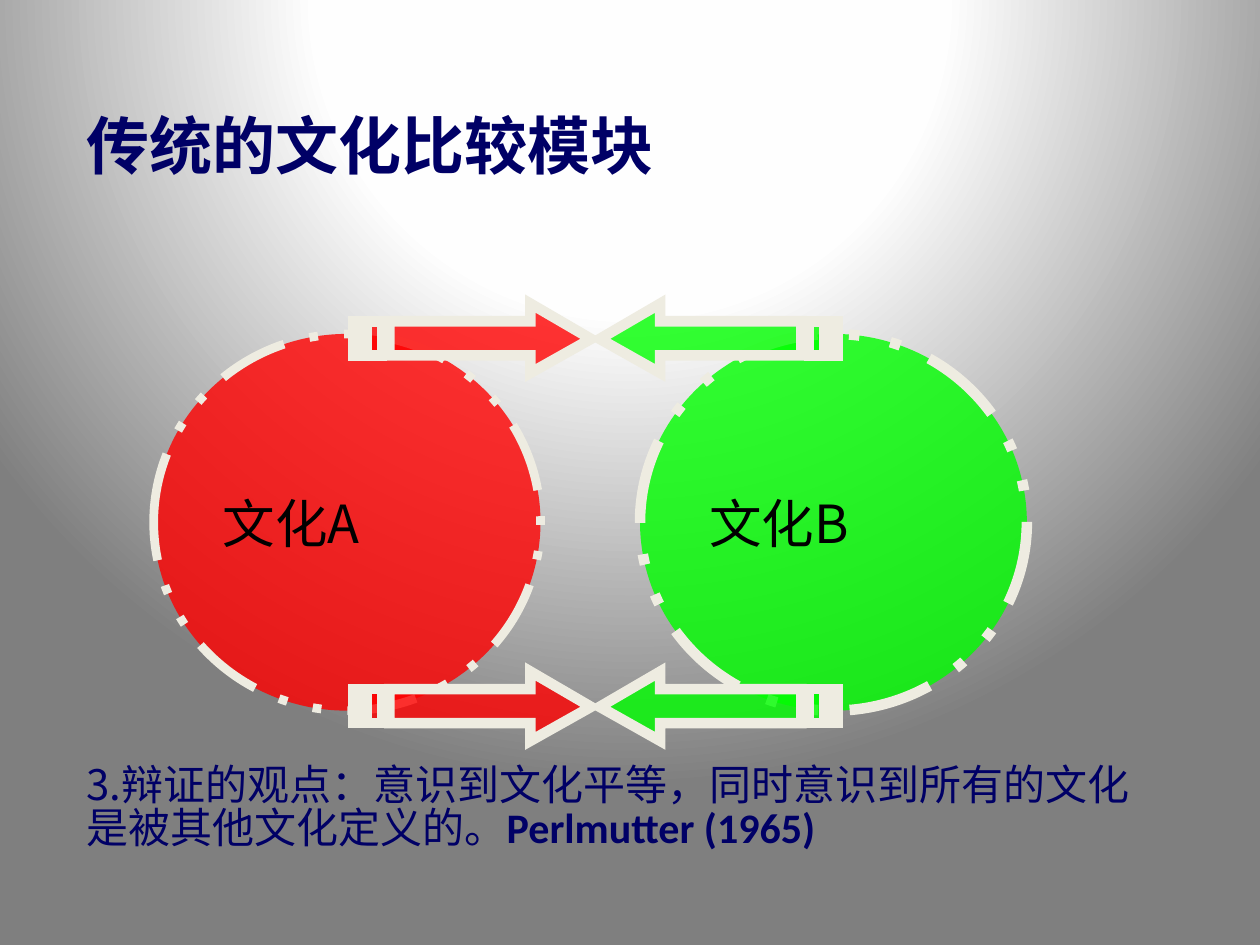
import pptx
import pptx.dml.color
import pptx.enum.dml
import pptx.enum.shapes
import pptx.enum.text
import pptx.oxml
import pptx.oxml.ns
import pptx.util

Inches = pptx.util.Inches
THEME = {
    "cjk": "Noto Sans CJK SC", "latin": "Calibri",
    "navy": "000066", "black": "000000", "cream": "EEECE1",
    "red": "FF0000", "green": "00FF00", "alpha": 80,
    "title": 36, "label": 30, "body": 24,
}


def add_run(p, text, size, color, font=THEME["cjk"], bold=False):
    r = p.add_run()
    r.text = text
    r.font.size = pptx.util.Pt(size)
    r.font.bold = bold
    r.font.name = font
    r.font.color.rgb = pptx.dml.color.RGBColor.from_string(color)
    ea = pptx.oxml.parse_xml(
        f'<a:ea {pptx.oxml.ns.nsdecls("a")} typeface="{font}"/>')
    r.font._element.find(pptx.oxml.ns.qn("a:latin")).addnext(ea)


def style_shape(sp, color, width):
    sp.shadow.inherit = False
    sp.fill.solid()
    sp.fill.fore_color.rgb = pptx.dml.color.RGBColor.from_string(color)
    clr = sp._element.spPr.find(".//" + pptx.oxml.ns.qn("a:srgbClr"))
    clr.append(pptx.oxml.parse_xml(
        f'<a:alpha {pptx.oxml.ns.nsdecls("a")} val="{THEME["alpha"] * 1000}"/>'))
    sp.line.color.rgb = pptx.dml.color.RGBColor.from_string(THEME["cream"])
    sp.line.width = pptx.util.Pt(width)
    sp.line._get_or_add_ln().append(pptx.oxml.parse_xml(
        f'<a:miter {pptx.oxml.ns.nsdecls("a")} lim="800000"/>'))


prs = pptx.Presentation()
prs.slide_width, prs.slide_height = Inches(10), Inches(7.5)
s = prs.slides.add_slide(prs.slide_layouts[5])

# Background: circular gradient centred above the slide
s.background.fill.solid()
solid = s._element.find(".//" + pptx.oxml.ns.qn("p:bgPr"))[0]
stops = "".join(
    f'<a:gs pos="{pos * 1000}"><a:srgbClr val="{color}"/></a:gs>'
    for pos, color in [(0, "FFFFFF"), (40, "FEFEFE"), (100, "7F7F7F")])
solid.getparent().replace(solid, pptx.oxml.parse_xml(
    f'<a:gradFill {pptx.oxml.ns.nsdecls("a")} rotWithShape="1">'
    f'<a:gsLst>{stops}</a:gsLst><a:path path="circle">'
    '<a:fillToRect l="50000" t="-80000" r="50000" b="180000"/>'
    '</a:path></a:gradFill>'))

# Title
title = s.shapes.title
title.left, title.top = Inches(0.59), Inches(0.52)
title.width, title.height = Inches(9.14), Inches(1.25)
tf = title.text_frame
tf.vertical_anchor = pptx.enum.text.MSO_ANCHOR.MIDDLE
p = tf.paragraphs[0]
p.alignment = pptx.enum.text.PP_ALIGN.LEFT
add_run(p, "传统的文化比较模块", THEME["title"], THEME["navy"], bold=True)

# Culture circles
for text, left, color, width in [("文化B", 5.08, THEME["green"], 6),
                                 ("文化A", 1.22, THEME["red"], 5)]:
    sp = s.shapes.add_shape(pptx.enum.shapes.MSO_SHAPE.OVAL, Inches(left),
                            Inches(2.65), Inches(3.07), Inches(2.99))
    style_shape(sp, color, width)
    sp.line.dash_style = pptx.enum.dml.MSO_LINE.DASH_DOT_DOT
    tf = sp.text_frame
    tf.word_wrap = True
    tf.vertical_anchor = pptx.enum.text.MSO_ANCHOR.MIDDLE
    p = tf.paragraphs[0]
    p.alignment = pptx.enum.text.PP_ALIGN.LEFT
    add_run(p, text, THEME["label"], THEME["black"])

# Explanation
box = s.shapes.add_textbox(Inches(0.59), Inches(5.8), Inches(8.5), Inches(1.25))
tf = box.text_frame
tf.word_wrap = True
tf.vertical_anchor = pptx.enum.text.MSO_ANCHOR.MIDDLE
p = tf.paragraphs[0]
p.line_spacing = 0.85
add_run(p, "3.辩证的观点：意识到文化平等，同时意识到所有的文化是被其他文化定义的。",
        THEME["body"], THEME["navy"])
add_run(p, "Perlmutter (1965)", THEME["body"], THEME["navy"],
        THEME["latin"], True)

# Striped arrows: each contour runs from the tail, mirrored for the green side
contours = [
    [(1.41, 0), (1.41, 0.14), (0.29, 0.14), (0.29, 0.41),
     (1.41, 0.41), (1.41, 0.55), (1.89, 0.28)],
    [(0.11, 0.14), (0.11, 0.41), (0.23, 0.41), (0.23, 0.14)],
    [(0, 0.14), (0, 0.41), (0.05, 0.41), (0.05, 0.14)],
]
for top in (2.41, 5.33):
    for tail, direction, color in [(2.8, 1, THEME["red"]),
                                   (6.65, -1, THEME["green"])]:
        paths = [[(Inches(tail + direction * x), Inches(top + y))
                  for x, y in contour] for contour in contours]
        builder = s.shapes.build_freeform(*paths[0][0])
        builder.add_line_segments(paths[0][1:], close=True)
        for path_points in paths[1:]:
            builder.move_to(*path_points[0])
            builder.add_line_segments(path_points[1:], close=True)
        style_shape(builder.convert_to_shape(), color, 6)

prs.save("out.pptx")
